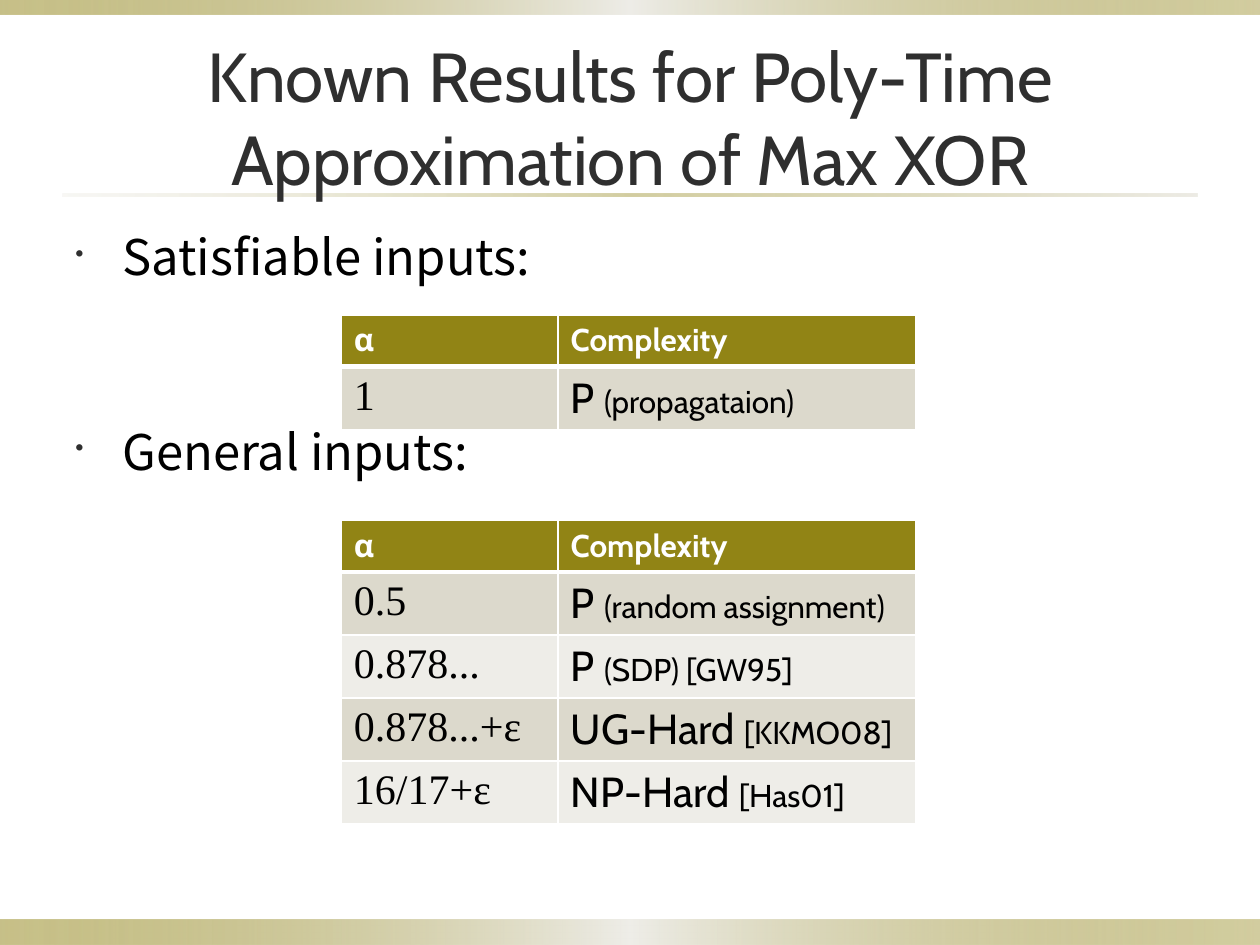
from lxml import etree
from pptx import Presentation
from pptx.dml.color import RGBColor
from pptx.enum.shapes import MSO_SHAPE
from pptx.enum.text import MSO_ANCHOR, PP_ALIGN
from pptx.oxml import parse_xml
from pptx.oxml.ns import nsdecls, qn
from pptx.util import Cm, Pt

RECTANGLE = MSO_SHAPE.RECTANGLE
MIDDLE = MSO_ANCHOR.MIDDLE
CENTER = PP_ALIGN.CENTER

OLIVE, SAND, PALE = "918415", "DCD9CC", "EEEDE8"
WHITE, BLACK, CHARCOAL = "FFFFFF", "000000", "2F2F2F"
HEADING_FONT, BODY_FONT, NUMBER_FONT = "Cabin", "Noto Sans CJK JP", "Times New Roman"

SLIDE_W, SLIDE_H = 25.4, 19.05
MARGIN = 1.27
CONTENT_W = SLIDE_W - 2 * MARGIN
BAND_STOPS = [(0, OLIVE, 50), (50, PALE, 100), (100, OLIVE, 40)]
RULE_STOPS = [(0, SAND, 20), (50, OLIVE, 40), (100, SAND, 50)]

TABLE_LEFT = 6.88
COLUMN_WIDTHS = (4.37, 7.21)
HEADER_H, ROW_H = 1.04, 1.27
HEADERS = ("α", "Complexity")
SATISFIABLE_RESULTS = [("1", "P ", "(propagataion)")]
GENERAL_RESULTS = [
    ("0.5", "P ", "(random assignment)"),
    ("0.878...", "P ", "(SDP) [GW95]"),
    ("0.878...+ε", "UG-Hard ", "[KKMO08]"),
    ("16/17+ε", "NP-Hard ", "[Has01]"),
]


def rgb(color):
    return RGBColor.from_string(color)


def set_font(font, name, size, color, bold=False):
    font.name, font.size, font.bold = name, Pt(size), bold
    font.color.rgb = rgb(color)


def add_gradient_bar(slide, left, top, width, height, stops):
    """Stops are (position %, colour, opacity %) from left to right."""
    bar = slide.shapes.add_shape(RECTANGLE, Cm(left), Cm(top), Cm(width), Cm(height))
    bar.shadow.inherit = False
    bar.line.fill.background()
    stop_xml = "".join(
        f'<a:gs pos="{position * 1000}"><a:srgbClr val="{color}">'
        f'<a:alpha val="{opacity * 1000}"/></a:srgbClr></a:gs>'
        for position, color, opacity in stops
    )
    gradient = parse_xml(
        f'<a:gradFill {nsdecls("a")} rotWithShape="1"><a:gsLst>{stop_xml}</a:gsLst>'
        '<a:lin ang="0" scaled="0"/></a:gradFill>'
    )
    bar._element.spPr.find(qn("a:prstGeom")).addnext(gradient)


def add_text_frame(slide, left, top, width, height):
    frame = slide.shapes.add_textbox(Cm(left), Cm(top), Cm(width), Cm(height)).text_frame
    frame.word_wrap = True
    return frame


def add_title(slide, left, top, width, height):
    frame = add_text_frame(slide, left, top, width, height)
    frame.vertical_anchor = MIDDLE
    title = frame.paragraphs[0]
    title.text = "Known Results for Poly-Time Approximation of Max XOR"
    title.alignment = CENTER
    set_font(title.font, HEADING_FONT, 39.6, CHARCOAL)


def add_bullet(paragraph):
    properties = paragraph._p.get_or_add_pPr()
    properties.set("marL", str(Cm(0.95)))
    properties.set("indent", str(-Cm(0.95)))
    color = etree.SubElement(properties, qn("a:buClr"))
    etree.SubElement(color, qn("a:srgbClr"), val=CHARCOAL)
    etree.SubElement(properties, qn("a:buSzPct"), val="50000")
    etree.SubElement(properties, qn("a:buChar"), char="•")


def add_input_kinds(slide, left, top, width, height):
    frame = add_text_frame(slide, left, top, width, height)
    satisfiable, general = frame.paragraphs[0], frame.add_paragraph()
    satisfiable.text, general.text = "Satisfiable inputs:", "General inputs:"
    general.space_before = Pt(77.5)
    for paragraph in (satisfiable, general):
        set_font(paragraph.font, BODY_FONT, 28, BLACK)
        add_bullet(paragraph)


def style_cell(cell, fill, bottom_width=1):
    properties = cell._tc.get_or_add_tcPr()
    for side, width in (("lnL", 1), ("lnR", 1), ("lnT", 1), ("lnB", bottom_width)):
        border = etree.SubElement(properties, qn(f"a:{side}"), w=str(Pt(width)))
        solid = etree.SubElement(border, qn("a:solidFill"))
        etree.SubElement(solid, qn("a:srgbClr"), val=WHITE)
    cell.fill.solid()
    cell.fill.fore_color.rgb = rgb(fill)


def add_results_table(slide, left, top, results):
    height = HEADER_H + ROW_H * len(results)
    table = slide.shapes.add_table(
        len(results) + 1, len(HEADERS),
        Cm(left), Cm(top), Cm(sum(COLUMN_WIDTHS)), Cm(height),
    ).table
    for column, width in zip(table.columns, COLUMN_WIDTHS):
        column.width = Cm(width)
    for index, row in enumerate(table.rows):
        row.height = Cm(ROW_H if index else HEADER_H)

    for column, header in enumerate(HEADERS):
        cell = table.cell(0, column)
        style_cell(cell, OLIVE, bottom_width=3)
        paragraph = cell.text_frame.paragraphs[0]
        paragraph.text = header
        set_font(paragraph.font, HEADING_FONT, 18, WHITE, bold=True)

    for index, (alpha, complexity, source) in enumerate(results, start=1):
        alpha_cell, complexity_cell = table.cell(index, 0), table.cell(index, 1)
        for cell in (alpha_cell, complexity_cell):
            style_cell(cell, SAND if index % 2 else PALE)
        paragraph = alpha_cell.text_frame.paragraphs[0]
        paragraph.text = alpha
        set_font(paragraph.font, NUMBER_FONT, 24, BLACK)
        paragraph = complexity_cell.text_frame.paragraphs[0]
        for text, size in ((complexity, 24), (source, 18)):
            run = paragraph.add_run()
            run.text = text
            set_font(run.font, HEADING_FONT, size, BLACK)


def add_decoration(slide):
    add_gradient_bar(slide, 0, SLIDE_H - 0.51, SLIDE_W, 0.51, BAND_STOPS)
    add_gradient_bar(slide, 0, 0, SLIDE_W, 0.3, BAND_STOPS)
    add_gradient_bar(slide, MARGIN, 3.91, CONTENT_W, 0.05, RULE_STOPS)


def main():
    presentation = Presentation()
    presentation.slide_width, presentation.slide_height = Cm(SLIDE_W), Cm(SLIDE_H)
    slide = presentation.slides.add_slide(presentation.slide_layouts[6])
    add_decoration(slide)
    add_title(slide, MARGIN, 0.76, CONTENT_W, 3.18)
    add_input_kinds(slide, MARGIN, 4.45, CONTENT_W, 13.03)
    add_results_table(slide, TABLE_LEFT, 10.49, GENERAL_RESULTS)
    add_results_table(slide, TABLE_LEFT, 6.35, SATISFIABLE_RESULTS)
    presentation.save("out.pptx")


if __name__ == "__main__":
    main()
